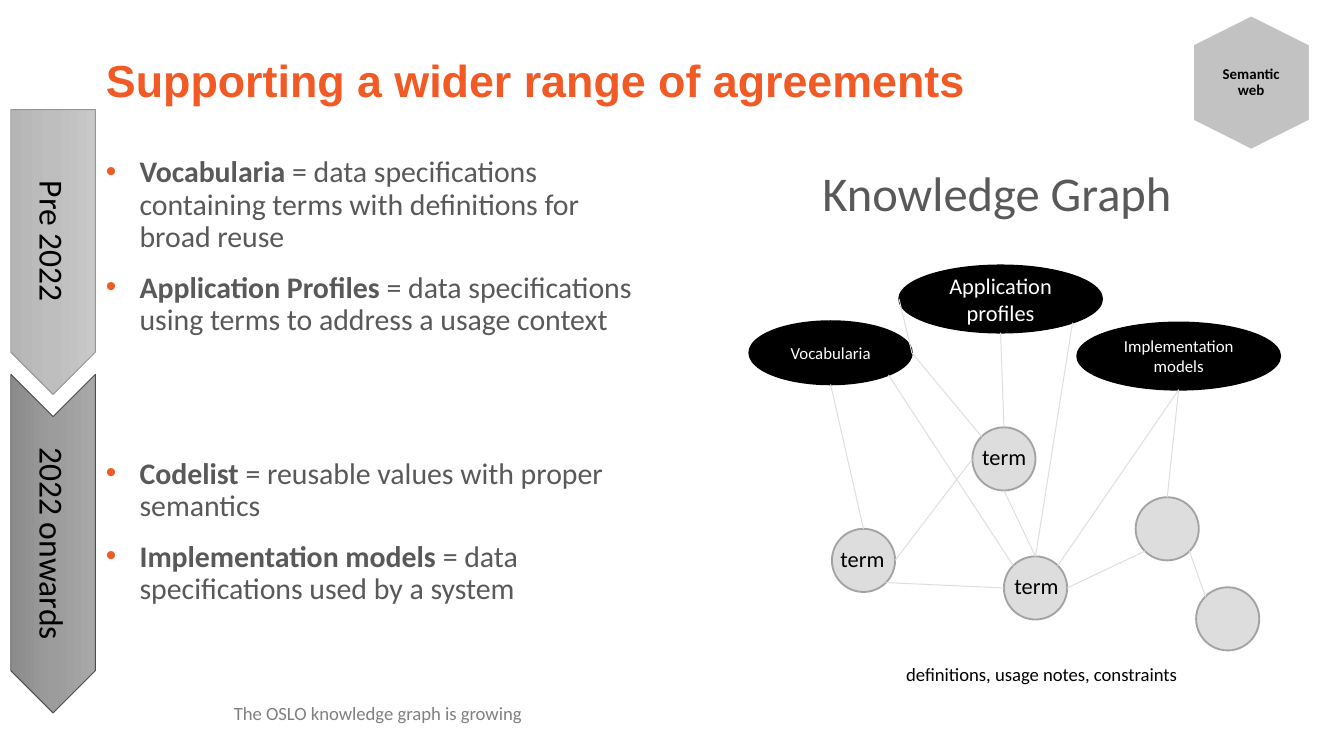
"""Build the slide on supporting a wider range of agreements."""
import math

import pptx
import pptx.dml.color
import pptx.enum.shapes
import pptx.enum.text
import pptx.oxml
import pptx.oxml.ns
import pptx.util

PX = 4572
COLORS = {
    "orange": "F15A24", "text": "595959", "footer": "808080", "black": "000000",
    "white": "FFFFFF", "badge": "C2C2C2", "node": "DDDDDD", "ring": "A3A3A3",
    "early light": "C9C9C9", "early mid": "BEBEBE", "early dark": "B5B5B5",
    "early edge": "969696", "late light": "A8A8A8", "late mid": "9C9C9C",
    "late dark": "8B8B8B", "late edge": "4D4D4D",
}
SHAPE = pptx.enum.shapes.MSO_SHAPE
ALIGN = pptx.enum.text.PP_ALIGN
ANCHOR = pptx.enum.text.MSO_ANCHOR
rgb = pptx.dml.color.RGBColor.from_string
qn = pptx.oxml.ns.qn
NAMESPACE = pptx.oxml.ns.nsdecls("a")

deck = pptx.Presentation()
deck.slide_width, deck.slide_height = 2000 * PX, 1125 * PX
slide = deck.slides.add_slide(deck.slide_layouts[6])


def add_text(holder, paragraphs, size, color, font="Calibri", align=ALIGN.LEFT,
             anchor=ANCHOR.TOP, spacing=1.0, inset=None, wrap=True):
    """Fill a shape, or a new text box at the given place, with styled runs."""
    if isinstance(holder, tuple):
        holder = slide.shapes.add_textbox(*(v * PX for v in holder))
    frame = holder.text_frame
    frame.word_wrap = wrap
    frame.vertical_anchor = anchor
    if inset is not None:
        frame.margin_left = frame.margin_right = inset * PX
        frame.margin_top = frame.margin_bottom = inset * PX
    for index, runs in enumerate(paragraphs):
        paragraph = frame.add_paragraph() if index else frame.paragraphs[0]
        paragraph.alignment = align
        paragraph.line_spacing = spacing
        for words, bold in runs:
            run = paragraph.add_run()
            run.text = words
            run.font.name = font
            run.font.size = pptx.util.Pt(size)
            run.font.bold = bold
            run.font.color.rgb = rgb(COLORS[color])
    return frame


def add_figure(kind, place, fill, line, width=1):
    """Add a preset shape; a list of fill colours makes a gradient."""
    figure = slide.shapes.add_shape(kind, *(v * PX for v in place))
    figure.shadow.inherit = False
    if isinstance(fill, list):
        figure.fill.gradient()
        figure.fill.gradient_angle = 270
        stops = figure.element.spPr.find(".//" + qn("a:gsLst"))
        for stop in list(stops):
            stops.remove(stop)
        for index, shade in enumerate(fill):
            stops.append(pptx.oxml.parse_xml(
                f'<a:gs {NAMESPACE} pos="{index * 50000}">'
                f'<a:srgbClr val="{COLORS[shade]}"/></a:gs>'))
    else:
        figure.fill.solid()
        figure.fill.fore_color.rgb = rgb(COLORS[fill])
    figure.line.color.rgb = rgb(COLORS[line])
    figure.line.width = pptx.util.Pt(width)
    return figure


add_text((138, 60, 1724, 126), [[("Supporting a wider range of agreements", True)]],
         24, "orange", font="Arial", anchor=ANCHOR.MIDDLE, spacing=0.9)

agreements = [
    ("Vocabularia", " = data specifications containing terms with definitions for broad reuse", 0),
    ("Application Profiles ", "= data specifications using terms to address a usage context", 10),
    ("Codelist", " = reusable values with proper semantics", 65),
    ("Implementation models", " = data specifications used by a system", 10),
]
body = add_text((138, 224, 830, 778),
                [[(term, True), (meaning, False)] for term, meaning, gap in agreements],
                16, "text", spacing=0.9)
for paragraph, (term, meaning, gap) in zip(body.paragraphs, agreements):
    if gap:
        paragraph.space_before = pptx.util.Pt(gap)
    properties = paragraph._p.get_or_add_pPr()
    properties.set("marL", str(50 * PX))
    properties.set("indent", str(-50 * PX))
    for bullet in (f'<a:buClr {NAMESPACE}><a:srgbClr val="{COLORS["orange"]}"/></a:buClr>',
                   f'<a:buFont {NAMESPACE} typeface="Arial"/>',
                   f'<a:buChar {NAMESPACE} char="•"/>'):
        properties.append(pptx.oxml.parse_xml(bullet))

add_text((348, 1042, 606, 36), [[("The OSLO knowledge graph is growing", False)]],
         10, "footer", anchor=ANCHOR.BOTTOM, spacing=0.9, inset=0)

badge = add_figure(SHAPE.HEXAGON, (1762, 36, 200, 174), "badge", "white")
badge.adjustments[0] = 0.25
badge.rotation = 90
add_text((1802, 54, 120, 138), [[("Semantic web", True)]], 8, "black",
         align=ALIGN.CENTER, anchor=ANCHOR.MIDDLE, spacing=0.9, inset=6)

add_text((1204, 243, 610, 126), [[("Knowledge Graph", False)]], 26, "text", spacing=0.9)

specifications = {
    "vocabularia": ((1115, 478, 242, 94), "Vocabularia", 9),
    "profiles": ((1338, 395, 302, 100), "Application profiles", 12),
    "models": ((1603, 480, 302, 100), "Implementation models", 9),
}
terms = {"left": (1238, 787), "top": (1447, 636), "middle": (1494, 828),
         "right": (1690, 740), "corner": (1780, 874)}
places = {}
for name, (place, label, size) in specifications.items():
    places[name] = place
    ellipse = add_figure(SHAPE.FLOWCHART_CONNECTOR, place, "black", "black")
    add_text(ellipse, [[(label, False)]], size, "white",
             align=ALIGN.CENTER, anchor=ANCHOR.MIDDLE)
for name, (left, top) in terms.items():
    places[name] = (left, top, 94, 94)
    add_figure(SHAPE.FLOWCHART_CONNECTOR, places[name], "node", "ring")

compass = ["e", "se", "s", "sw", "w", "nw", "n", "ne"]
relations = [
    ("vocabularia", "e", "profiles", "w"), ("vocabularia", "s", "left", "n"),
    ("left", "e", "top", "w"), ("top", "n", "profiles", "s"),
    ("right", "n", "models", "s"), ("middle", "ne", "models", "s"),
    ("middle", "n", "profiles", "se"), ("middle", "nw", "vocabularia", "se"),
    ("top", "s", "middle", "n"), ("middle", "e", "right", "sw"),
    ("right", "se", "corner", "nw"), ("left", "se", "middle", "w"),
    ("vocabularia", "e", "top", "nw"),
]
for source, source_side, target, target_side in relations:
    ends = []
    for name, side in ((source, source_side), (target, target_side)):
        left, top, width, height = places[name]
        angle = compass.index(side) * math.pi / 4
        ends += [round(left + width / 2 * (1 + math.cos(angle))) * PX,
                 round(top + height / 2 * (1 + math.sin(angle))) * PX]
    relation = slide.shapes.add_connector(pptx.enum.shapes.MSO_CONNECTOR.STRAIGHT, *ends)
    relation.line.color.rgb = rgb(COLORS["node"])
    relation.line.width = pptx.util.Pt(0.5)
    relation.element.spPr.append(pptx.oxml.parse_xml(f'<a:effectLst {NAMESPACE}/>'))

for left, top in ((1231, 801), (1442, 650), (1490, 842)):
    add_text((left, top, 140, 60), [[("term", False)]], 12, "black")
add_text((1329, 976, 452, 54), [[("definitions, usage notes, constraints", False)]],
         10, "black", wrap=False)

periods = [
    (SHAPE.PENTAGON, (-133, 312, 424, 126), "Pre 2022", "early"),
    (SHAPE.CHEVRON, (-173, 746, 504, 126), "2022 onwards", "late"),
]
for kind, place, label, era in periods:
    shades = [f"{era} {tone}" for tone in ("light", "mid", "dark")]
    period = add_figure(kind, place, shades, f"{era} edge", 0.5)
    period.rotation = 90
    add_text(period, [[(label, False)]], 18, "black",
             align=ALIGN.CENTER, anchor=ANCHOR.MIDDLE)

deck.save("out.pptx")
